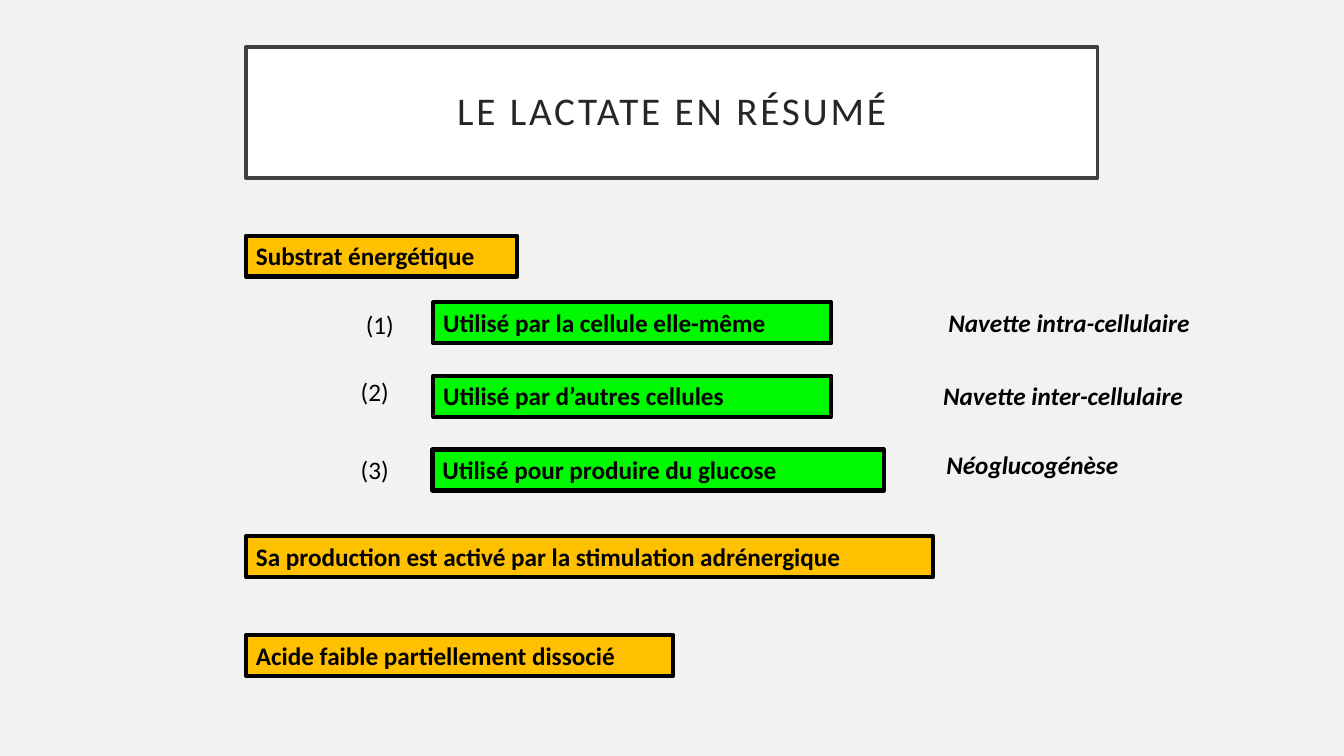
from dataclasses import dataclass

from pptx import Presentation
from pptx.dml.color import RGBColor
from pptx.enum.shapes import MSO_SHAPE as Preset
from pptx.enum.text import MSO_ANCHOR as Anchor, PP_ALIGN as Align
from pptx.util import Cm, Pt


@dataclass(frozen=True)
class Theme:
    font: str = "Calibri"
    background: str = "F2F2F2"
    title_fill: str = "FFFFFF"
    title_line: str = "404040"
    title_text: str = "262626"
    fact_fill: str = "FFC000"
    use_fill: str = "00F900"
    ink: str = "000000"
    title_size: float = 28
    body_size: float = 18
    title_border: float = 2.5
    body_border: float = 3


THEME = Theme()
LEFT = 6.2
ROW_HEIGHT = 1.03

TITLE = "LE LACTATE EN RÉSUMÉ"

# Text, top, width (cm)
FACTS = [
    ("Substrat énergétique", 5.94, 6.83),
    ("Sa production est activé par la stimulation adrénergique", 13.51, 17.32),
    ("Acide faible partiellement dissocié", 16, 10.77),
]

# Text, left, top, width (cm)
USES = [
    ("Utilisé par la cellule elle-même", 10.92, 7.62, 10.03),
    ("Utilisé par d’autres cellules", 10.92, 9.47, 10.03),
    ("Utilisé pour produire du glucose", 10.9, 11.33, 11.38),
]
PATHWAYS = [
    ("Navette intra-cellulaire", 23.65, 7.62, 7.04),
    ("Navette inter-cellulaire", 23.52, 9.47, 7.04),
    ("Néoglucogénèse", 23.6, 11.2, 5.05),
]
NUMBERS = [
    ("(1)", 8.97, 7.67, 1.24),
    ("(2)", 8.84, 9.35, 1.24),
    ("(3)", 8.84, 11.33, 1.24),
]


def color(value):
    return RGBColor.from_string(value)


def write(shape, text, size=THEME.body_size, ink=THEME.ink, bold=False, italic=False):
    """Put one left-aligned run into a shape and return that run."""
    shape.text_frame.word_wrap = True
    paragraph = shape.text_frame.paragraphs[0]
    paragraph.alignment = Align.LEFT
    run = paragraph.add_run()
    run.text = text
    run.font.name = THEME.font
    run.font.size = Pt(size)
    run.font.bold = bold
    run.font.italic = italic
    run.font.color.rgb = color(ink)
    return run


def add_box(slide, left, top, width, height, fill, line, border):
    shape = slide.shapes.add_shape(
        Preset.RECTANGLE, Cm(left), Cm(top), Cm(width), Cm(height))
    shape.shadow.inherit = False
    shape.fill.solid()
    shape.fill.fore_color.rgb = color(fill)
    shape.line.color.rgb = color(line)
    shape.line.width = Pt(border)
    return shape


def add_title(slide):
    shape = add_box(slide, LEFT, 1.19, 21.46, 3.3,
                    THEME.title_fill, THEME.title_line, THEME.title_border)
    run = write(shape, TITLE, THEME.title_size, THEME.title_text)
    run.font._element.set("spc", "200")
    frame = shape.text_frame
    frame.vertical_anchor = Anchor.MIDDLE
    frame.paragraphs[0].alignment = Align.CENTER
    frame.paragraphs[0].line_spacing = 0.9


def add_banner(slide, text, left, top, width, fill):
    shape = add_box(slide, left, top, width, ROW_HEIGHT,
                    fill, THEME.ink, THEME.body_border)
    shape.text_frame.vertical_anchor = Anchor.TOP
    write(shape, text, bold=True)


def add_label(slide, text, left, top, width, **style):
    shape = slide.shapes.add_textbox(Cm(left), Cm(top), Cm(width), Cm(ROW_HEIGHT))
    write(shape, text, **style)


def main():
    presentation = Presentation()
    presentation.slide_width = Cm(33.87)
    presentation.slide_height = Cm(19.05)
    slide = presentation.slides.add_slide(presentation.slide_layouts[6])
    slide.background.fill.solid()
    slide.background.fill.fore_color.rgb = color(THEME.background)

    add_title(slide)
    for text, top, width in FACTS:
        add_banner(slide, text, LEFT, top, width, THEME.fact_fill)
    for number, use, pathway in zip(NUMBERS, USES, PATHWAYS):
        add_label(slide, *number)
        add_banner(slide, *use, THEME.use_fill)
        add_label(slide, *pathway, bold=True, italic=True)

    presentation.save("out.pptx")


if __name__ == "__main__":
    main()
